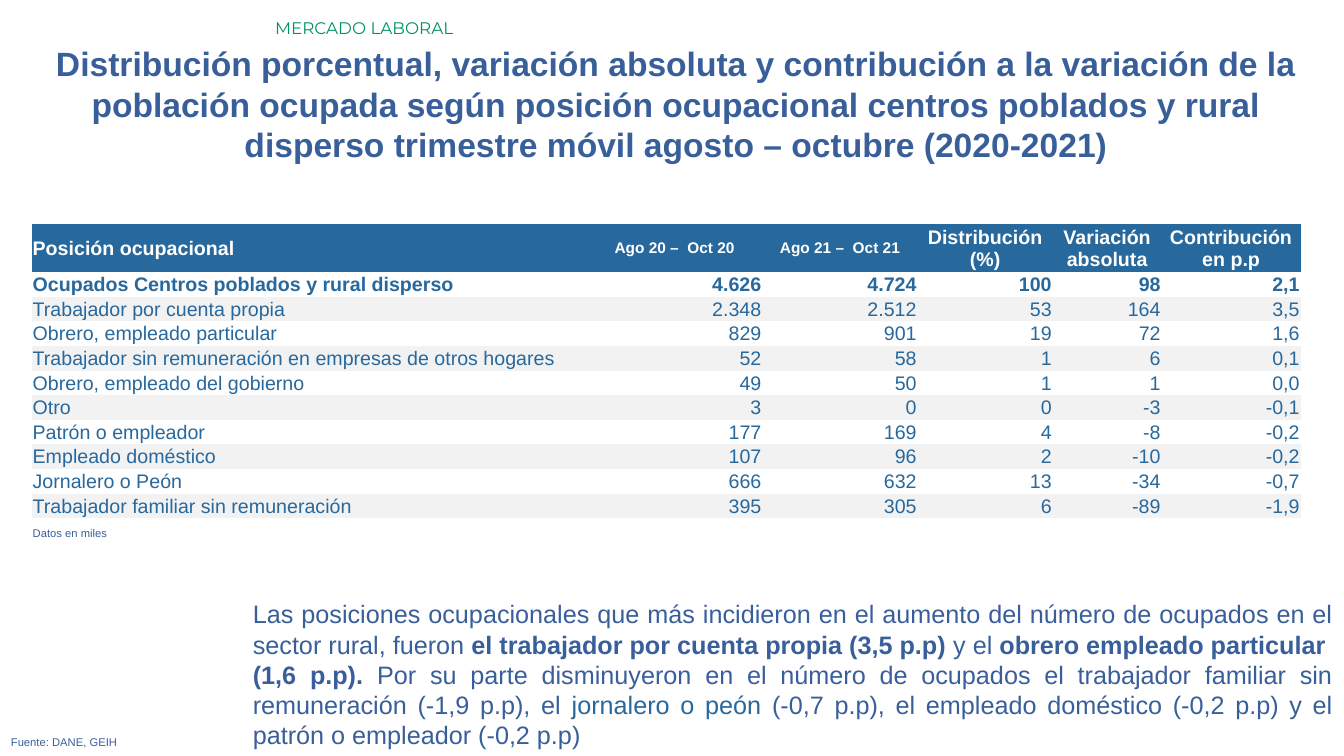
from pptx import Presentation
from pptx.dml.color import RGBColor
from pptx.enum.text import MSO_ANCHOR, MSO_AUTO_SIZE, PP_ALIGN
from pptx.util import Pt

COLORS = {
    "blue": "395F9B",
    "table": "27689D",
    "green": "009267",
    "band": "F2F2F2",
    "white": "FFFFFF",
}
NO_GRID_STYLE = "{2D5ABB26-0587-4C30-8999-92F81FD0307C}"
COLUMN_WIDTHS = [396.7, 125.3, 110.9, 96.5, 77.8, 99.3]
HEADER_HEIGHT, ROW_HEIGHT = 34.3, 17.57
HEADINGS = ["Posición ocupacional", "Ago 20 –  Oct 20", "Ago 21 –  Oct 21",
            "Distribución (%)", "Variación absoluta", "Contribución en p.p"]
HEADING_SIZES = [14, 11, 11, 14, 14, 14]
POSITIONS = [
    ["Ocupados Centros poblados y rural disperso", "4.626", "4.724", "100", "98", "2,1"],
    ["Trabajador por cuenta propia", "2.348", "2.512", "53", "164", "3,5"],
    ["Obrero, empleado particular", "829", "901", "19", "72", "1,6"],
    ["Trabajador sin remuneración en empresas de otros hogares", "52", "58", "1", "6", "0,1"],
    ["Obrero, empleado del gobierno", "49", "50", "1", "1", "0,0"],
    ["Otro", "3", "0", "0", "-3", "-0,1"],
    ["Patrón o empleador", "177", "169", "4", "-8", "-0,2"],
    ["Empleado doméstico", "107", "96", "2", "-10", "-0,2"],
    ["Jornalero o Peón", "666", "632", "13", "-34", "-0,7"],
    ["Trabajador familiar sin remuneración", "395", "305", "6", "-89", "-1,9"],
]
FINDINGS = [
    ("Las posiciones ocupacionales que más incidieron en el aumento del número de "
     "ocupados en el sector rural, fueron ", False, "blue"),
    ("el trabajador por cuenta propia (3,5 p.p) ", True, "blue"),
    ("y el ", False, "blue"),
    ("obrero empleado particular  (1,6 p.p). ", True, "blue"),
    ("Por su parte disminuyeron en el número de ocupados el trabajador familiar sin "
     "remuneración (-1,9 p.p), el ", False, "blue"),
    ("jornalero o peón ", False, "table"),
    ("(-0,7 p.p), el empleado doméstico (-0,2 p.p) y el patrón o empleador (-0,2 p.p)",
     False, "blue"),
]


def rgb(color):
    """Return the named colour."""
    return RGBColor.from_string(COLORS[color])


def style_font(font, size, color, bold=None, name="Arial"):
    """Set the look of a font."""
    font.name = name
    font.size = Pt(size)
    font.bold = bold
    font.color.rgb = rgb(color)


def add_text(slide, place, text, size, color="blue", align=PP_ALIGN.JUSTIFY,
             bold=None, name="Arial"):
    """Add a wrapped one-paragraph text box and return its paragraph."""
    frame = slide.shapes.add_textbox(*map(Pt, place)).text_frame
    frame.word_wrap = True
    frame.auto_size = MSO_AUTO_SIZE.SHAPE_TO_FIT_TEXT
    paragraph = frame.paragraphs[0]
    paragraph.text = text
    paragraph.alignment = align
    style_font(paragraph.font, size, color, bold, name)
    return paragraph


def add_findings(slide, place):
    """Add the closing paragraph with its emphasised parts."""
    paragraph = add_text(slide, place, "", 18)
    for text, bold, color in FINDINGS:
        run = paragraph.add_run()
        run.text = text
        run.font.bold = bold
        run.font.color.rgb = rgb(color)


def fill_cell(cell, text, size, color, bold, align, background):
    """Write one table cell and set its fill."""
    cell.margin_left = cell.margin_top = cell.margin_right = Pt(0.75)
    cell.margin_bottom = Pt(0)
    cell.vertical_anchor = MSO_ANCHOR.MIDDLE
    if background:
        cell.fill.solid()
        cell.fill.fore_color.rgb = rgb(background)
    else:
        cell.fill.background()
    paragraph = cell.text_frame.paragraphs[0]
    paragraph.text = text
    paragraph.alignment = align
    style_font(paragraph.font, size, color, bold)


def add_positions_table(slide, left, top):
    """Add the table of occupational positions."""
    height = HEADER_HEIGHT + ROW_HEIGHT * len(POSITIONS)
    table = slide.shapes.add_table(
        len(POSITIONS) + 1, len(HEADINGS), Pt(left), Pt(top),
        Pt(sum(COLUMN_WIDTHS)), Pt(height)).table
    table.horz_banding = False
    table._tbl.tblPr[0].text = NO_GRID_STYLE
    for column, width in zip(table.columns, COLUMN_WIDTHS):
        column.width = Pt(width)
    for index, row in enumerate(table.rows):
        row.height = Pt(ROW_HEIGHT if index else HEADER_HEIGHT)

    for col, (heading, size) in enumerate(zip(HEADINGS, HEADING_SIZES)):
        align = PP_ALIGN.CENTER if col else PP_ALIGN.LEFT
        fill_cell(table.cell(0, col), heading, size, "white", True, align, "table")
    for row, values in enumerate(POSITIONS, 1):
        background = "band" if row % 2 == 0 else None
        for col, value in enumerate(values):
            align = PP_ALIGN.RIGHT if col else PP_ALIGN.LEFT
            fill_cell(table.cell(row, col), value, 14, "table", row == 1, align, background)


def main():
    """Build the slide and save it."""
    presentation = Presentation()
    presentation.slide_width, presentation.slide_height = Pt(960), Pt(540)
    slide = presentation.slides.add_slide(presentation.slide_layouts[6])
    add_text(slide, (32.4, 27.4, 900.7, 94.3),
             "Distribución porcentual, variación absoluta y contribución a la variación "
             "de la población ocupada según posición ocupacional centros poblados y rural "
             "disperso trimestre móvil agosto – octubre (2020-2021)",
             24, align=PP_ALIGN.CENTER, bold=True)
    add_text(slide, (189.4, 9.4, 770.4, 21.6), "MERCADO LABORAL", 12, "green",
             PP_ALIGN.LEFT, name="Montserrat")
    add_findings(slide, (173.5, 424.1, 785.5, 116.6))
    add_text(slide, (0.7, 522, 929.5, 17.3), "Fuente: DANE, GEIH", 8)
    add_positions_table(slide, 22.6, 160)
    add_text(slide, (16.3, 372.2, 908.6, 17.3), "Datos en miles", 8)
    presentation.save("out.pptx")


if __name__ == "__main__":
    main()
